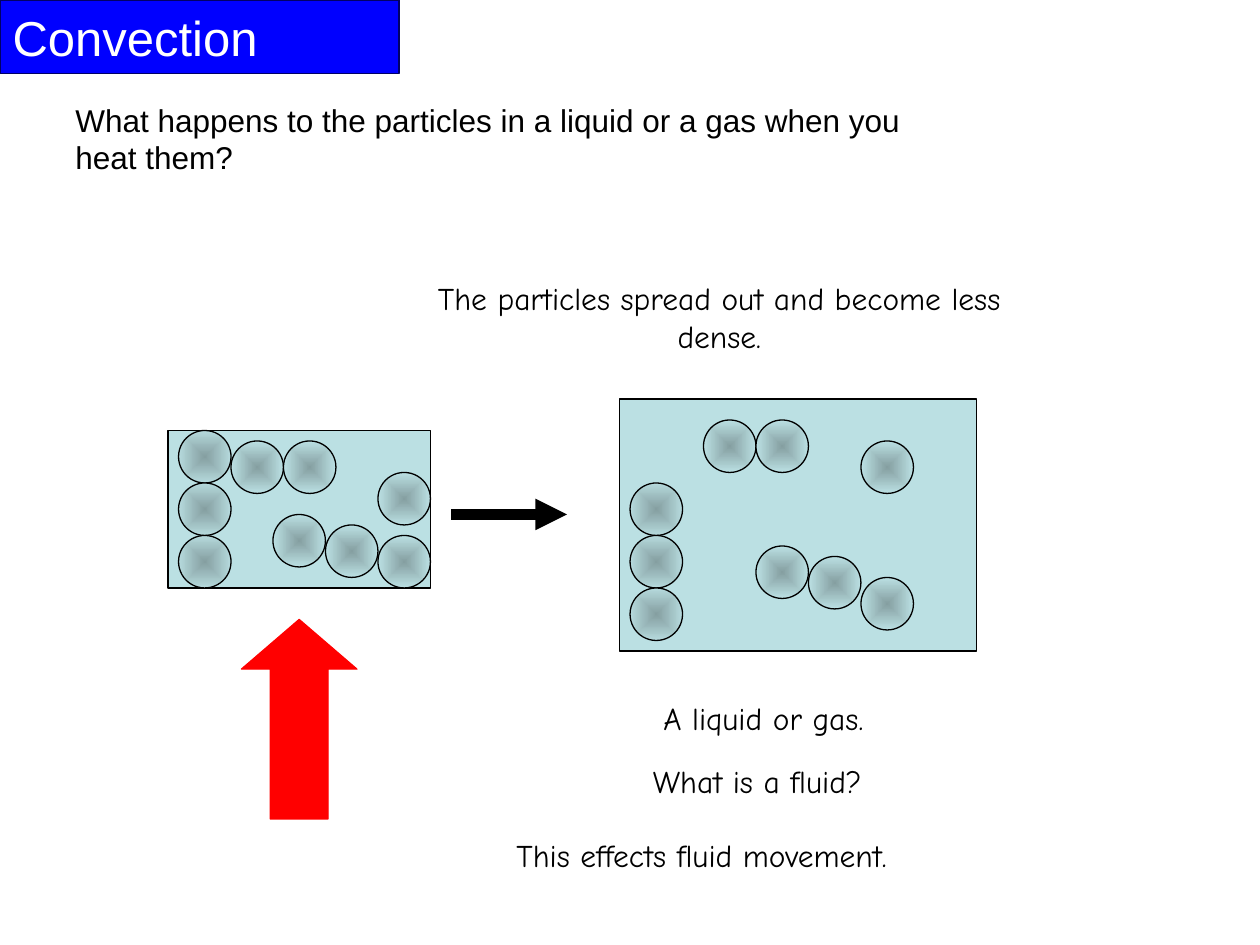
from lxml.etree import SubElement as Sub
from pptx import Presentation
from pptx.dml.color import RGBColor
from pptx.enum.dml import MSO_LINE
from pptx.enum.shapes import MSO_CONNECTOR as Conn, MSO_SHAPE as Kind
from pptx.enum.text import MSO_ANCHOR as Anchor, PP_ALIGN as Align
from pptx.oxml import parse_xml
from pptx.oxml.ns import nsdecls, qn
from pptx.util import Inches, Pt

HUES = {"title": "0000FF", "edge": "000066", "heat": "FF0000",
        "fluid": "BBE0E3", "ink": "000000", "paper": "FFFFFF"}
SANS, HAND = "Arial", "Comic Neue"
SIZE = 5  # ball diameter in cells

# Ball corners in cells from the top left of their tank.
COLD = [(1, 0), (1, 5), (1, 10), (6, 1), (11, 1),
        (10, 8), (15, 9), (20, 10), (20, 4)]
WARM = [(1, 8), (1, 13), (1, 18), (8, 2), (13, 2),
        (13, 14), (18, 15), (23, 17), (23, 4)]


def cell(n):
    """Length of n grid cells; the slide is 120 by 90 of them."""
    return Inches(n / 12)


def hue(name):
    return RGBColor.from_string(HUES[name])


def paint(shape, fill, edge):
    shape.fill.solid()
    shape.fill.fore_color.rgb = hue(fill)
    shape.line.color.rgb = hue(edge)
    shape.line.width = Pt(0.75)


def write(frame, text, font, size, color, align=Align.LEFT):
    frame.word_wrap = True
    para = frame.paragraphs[0]
    para.alignment = align
    run = para.add_run()
    run.text = text
    run.font.name = font
    run.font.size = Pt(size)
    run.font.color.rgb = hue(color)


def add_form(slide, kind, box, fill, edge):
    shape = slide.shapes.add_shape(kind, *map(cell, box))
    shape.shadow.inherit = False
    paint(shape, fill, edge)
    return shape


def add_title(slide, box, text):
    title = slide.shapes.title
    title.left, title.top, title.width, title.height = map(cell, box)
    paint(title, "title", "edge")
    title.text_frame.vertical_anchor = Anchor.MIDDLE
    write(title.text_frame, text, SANS, 28, "paper")


def add_note(slide, box, text, font=HAND, align=Align.LEFT):
    note = slide.shapes.add_textbox(*map(cell, box))
    write(note.text_frame, text, font, 18, "ink", align)


def shade(ball):
    """Fill a ball with a gradient that darkens towards its middle."""
    old = ball.fill._xPr.find(qn("a:solidFill"))
    new = parse_xml(
        f'<a:gradFill rotWithShape="0" {nsdecls("a")}><a:gsLst>'
        f'<a:gs pos="0"><a:srgbClr val="{HUES["fluid"]}">'
        '<a:shade val="46000"/></a:srgbClr></a:gs>'
        f'<a:gs pos="100000"><a:srgbClr val="{HUES["fluid"]}"/></a:gs>'
        '</a:gsLst><a:path path="shape">'
        '<a:fillToRect l="50000" t="50000" r="50000" b="50000"/>'
        '</a:path></a:gradFill>')
    old.getparent().replace(old, new)


def add_tank(slide, box, balls):
    add_form(slide, Kind.RECTANGLE, box, "fluid", "ink")
    for col, row in balls:
        spot = (box[0] + col, box[1] + row, SIZE, SIZE)
        ball = add_form(slide, Kind.OVAL, spot, "fluid", "ink")
        if col == 1:
            ball.rotation = 83.6
        shade(ball)


def add_heat(slide, box):
    arrow = add_form(slide, Kind.UP_ARROW, box, "heat", "heat")
    arrow.adjustments[0] = 0.5
    arrow.adjustments[1] = 0.43


def add_step(slide, left, right, row):
    step = slide.shapes.add_connector(
        Conn.STRAIGHT, cell(left), cell(row), cell(right), cell(row))
    step.line.color.rgb = hue("ink")
    step.line.width = Pt(6)
    step.line.dash_style = MSO_LINE.SOLID
    Sub(step.line._get_or_add_ln(), qn("a:tailEnd"), type="triangle")
    Sub(step._element.spPr, qn("a:effectLst"))


def main():
    deck = Presentation()
    deck.slide_width, deck.slide_height = cell(120), cell(90)
    slide = deck.slides.add_slide(deck.slide_layouts[5])

    add_title(slide, (0, 0, 38, 7), "Convection")
    add_note(slide, (6, 9, 87, 11), "What happens to the particles in a "
             "liquid or a gas when you heat them?", SANS)
    add_heat(slide, (23, 59, 11, 19))
    add_step(slide, 43, 54, 49)
    add_note(slide, (40, 26, 57, 11),
             "The particles spread out and become less dense.",
             align=Align.CENTER)
    add_note(slide, (48, 79, 60, 11), "This effects fluid movement.")
    add_note(slide, (61, 72, 32, 6), "What is a fluid?")
    add_note(slide, (62, 66, 30, 6), "A liquid or gas.")
    add_tank(slide, (16, 41, 25, 15), COLD)
    add_tank(slide, (59, 38, 34, 24), WARM)
    deck.save("out.pptx")


if __name__ == "__main__":
    main()
